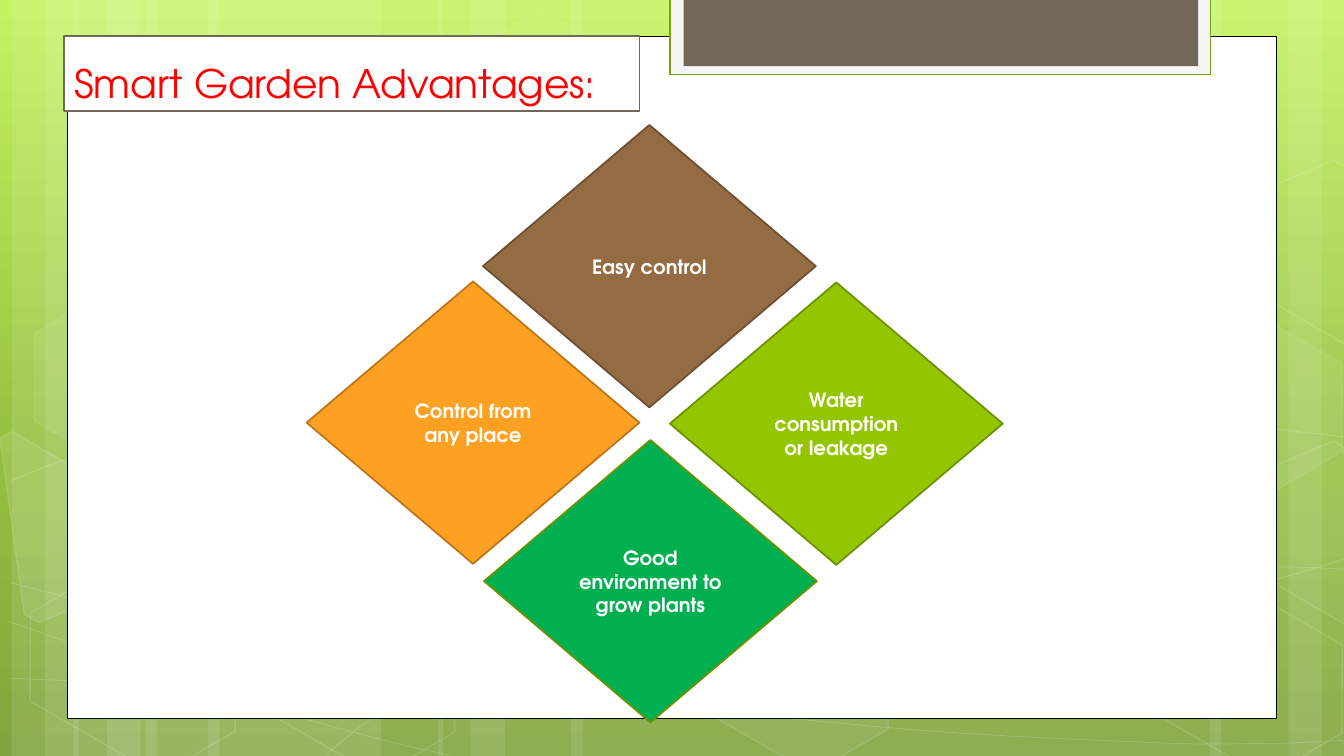
import copy

import pptx
import pptx.util
from pptx.dml.color import RGBColor
from pptx.enum.shapes import MSO_SHAPE
from pptx.enum.text import MSO_ANCHOR, MSO_AUTO_SIZE, PP_ALIGN
from pptx.oxml.ns import qn
from pptx.oxml.xmlchemy import OxmlElement

PX = 9525
PAGE_WIDTH, PAGE_HEIGHT = 1280, 720
FONT = "TeX Gyre Adventor"

WHITE = RGBColor(0xFF, 0xFF, 0xFF)
BLACK = RGBColor(0x00, 0x00, 0x00)
RED = RGBColor(0xFF, 0x00, 0x00)
PALE_GREY = RGBColor(0xF5, 0xF5, 0xF5)
TAUPE = RGBColor(0x71, 0x68, 0x5A)
LEAF = RGBColor(0x74, 0xA5, 0x10)
ORANGE = RGBColor(0xFE, 0xA0, 0x22)
DARK_ORANGE = RGBColor(0xBC, 0x76, 0x19)
BROWN = RGBColor(0x95, 0x6B, 0x43)
DARK_BROWN = RGBColor(0x6E, 0x4F, 0x32)
LIME = RGBColor(0x94, 0xC6, 0x00)
DARK_LIME = RGBColor(0x6D, 0x92, 0x00)
GREEN = RGBColor(0x00, 0xB0, 0x50)

BACKGROUND_STOPS = [
    (0, RGBColor(0xC3, 0xF3, 0x5F)),
    (0.62, RGBColor(0x93, 0xBF, 0x3F)),
    (1, RGBColor(0x81, 0xA5, 0x3E)),
]

# left, width
BARS = [
    (139, 224), (11, 64), (43, 107), (198, 224), (70, 64), (102, 107),
    (939, 224), (1227, 64), (1152, 107), (544, 395), (417, 64), (448, 107),
]

# a start point, then two control points and an end point for each bend
CURVES = [
    [(10, 646), (79, 649), (148, 652), (244, 651), (340, 650), (458, 648), (586, 638),
     (714, 629), (896, 611), (1013, 592), (1131, 574), (1251, 545), (1289, 529)],
    [(10, 458), (46, 443), (83, 428), (156, 414), (228, 399), (331, 378), (444, 372),
     (559, 366), (696, 364), (837, 372), (978, 379), (1212, 409), (1289, 417)],
    [(8, 592), (163, 645), (317, 698), (428, 719)],
    [(10, 555), (49, 565), (89, 576), (164, 591), (238, 606), (349, 630), (456, 646),
     (563, 662), (698, 680), (804, 689), (910, 700), (1023, 704), (1092, 707),
     (1159, 710), (1176, 708), (1210, 708), (1242, 708), (1266, 705), (1289, 705)],
    [(310, 719), (333, 700), (355, 681), (387, 663), (418, 646), (461, 627), (496, 613),
     (532, 600), (554, 594), (601, 585), (648, 575), (734, 562), (779, 555),
     (824, 548), (830, 548), (871, 546), (910, 543), (972, 540), (1017, 540),
     (1061, 539), (1135, 540), (1135, 540), (1163, 540), (1191, 540), (1219, 540),
     (1243, 540), (1264, 541), (1276, 542), (1287, 543), (1284, 542), (1287, 543)],
]

# left, top, fill opacity, line opacity
HEXAGONS = [
    (427, 35, 4, 8), (636, 565, 6, 12), (14, 567, 0, 12), (18, 300, 7, 8),
    (223, 568, 0, 12), (1068, 569, 0, 12), (1068, 301, 7, 8),
]

# fill opacity, corners
CUT_HEXAGONS = [
    (10, [(0, 417), (12, 411), (110, 468), (122, 558), (37, 593), (23, 585)]),
    (4, [(1186, 455), (1270, 420), (1279, 425), (1303, 600), (1295, 603), (1197, 546)]),
    (0, [(1186, 188), (1270, 153), (1281, 158), (1303, 332), (1295, 336), (1197, 279)]),
]

# left, top, text, fill, line
ADVANTAGES = [
    (292, 268, "Control from any place", ORANGE, DARK_ORANGE),
    (460, 119, "Easy control", BROWN, DARK_BROWN),
    (638, 269, "Water consumption or leakage", LIME, DARK_LIME),
    (461, 419, "Good environment to grow plants", GREEN, DARK_LIME),
]


def set_opacity(shape, fill_route, percent):
    for colour in shape.element.spPr.xpath(fill_route + "/a:srgbClr"):
        alpha = OxmlElement("a:alpha")
        alpha.set("val", str(percent * 1000))
        colour.append(alpha)


def paint(shape, fill=None, line=None, weight=1.25, fill_opacity=100, line_opacity=100):
    """Fill and outline a shape; None or zero opacity leaves that part empty."""
    if fill is None or fill_opacity == 0:
        shape.fill.background()
    else:
        shape.fill.solid()
        shape.fill.fore_color.rgb = fill
    if line is None:
        shape.line.fill.background()
    else:
        shape.line.color.rgb = line
        shape.line.width = pptx.util.Pt(weight)
    if fill_opacity < 100:
        set_opacity(shape, "./a:solidFill", fill_opacity)
    if line_opacity < 100:
        set_opacity(shape, "./a:ln/a:solidFill", line_opacity)


def add_preset(parent, kind, left, top, width, height, **look):
    shape = parent.shapes.add_shape(kind, left * PX, top * PX, width * PX, height * PX)
    shape.shadow.inherit = False
    paint(shape, **look)
    return shape


def add_outline(parent, points, closed, **look):
    start, *rest = points
    builder = parent.shapes.build_freeform(*start, scale=PX)
    builder.add_line_segments(rest, close=closed)
    shape = builder.convert_to_shape()
    shape.shadow.inherit = False
    paint(shape, line=WHITE, **look)
    return shape


def bend_segments(shape):
    """Turn each three straight segments into one cubic Bezier bend."""
    segments = shape.element.spPr.xpath(".//a:lnTo")
    for first in range(0, len(segments), 3):
        bend = OxmlElement("a:cubicBezTo")
        segments[first].addprevious(bend)
        for segment in segments[first:first + 3]:
            bend.append(segment[0])
            segment.getparent().remove(segment)


def write_text(shape, text, size, colour, bold=False, align=PP_ALIGN.LEFT,
               anchor=MSO_ANCHOR.MIDDLE):
    frame = shape.text_frame
    frame.word_wrap = True
    frame.auto_size = MSO_AUTO_SIZE.NONE
    frame.vertical_anchor = anchor
    para = frame.paragraphs[0]
    para.alignment = align
    span = para.add_run()
    span.text = text
    span.font.name = FONT
    span.font.size = pptx.util.Pt(size)
    span.font.bold = bold
    span.font.color.rgb = colour


def fill_background(page):
    fill = page.background.fill
    fill.gradient()
    fill.gradient_angle = 270
    stop_list = page.element.find(".//" + qn("a:gsLst"))
    stop_list.append(copy.deepcopy(stop_list[0]))
    for stop, (position, colour) in zip(fill.gradient_stops, BACKGROUND_STOPS):
        stop.position = position
        stop.color.rgb = colour


def add_backdrop(page):
    backdrop = page.shapes.add_group_shape()
    for left, width in BARS:
        add_preset(backdrop, MSO_SHAPE.RECTANGLE, left, 0, width, PAGE_HEIGHT,
                   fill=WHITE, fill_opacity=10)
    for knots in CURVES:
        bend_segments(add_outline(backdrop, knots, False, weight=0.5, line_opacity=20))
    for left, top, fill_opacity, line_opacity in HEXAGONS:
        hexagon = add_preset(backdrop, MSO_SHAPE.HEXAGON, left, top, 225, 146, fill=WHITE,
                             line=WHITE, weight=1, fill_opacity=fill_opacity,
                             line_opacity=line_opacity)
        hexagon.adjustments[0] = 0.285
        hexagon.rotation = 30
    for opacity, corners in CUT_HEXAGONS:
        add_outline(backdrop, corners, True, fill=WHITE, weight=1, fill_opacity=opacity,
                    line_opacity=12)


def add_title(page, text):
    title = page.shapes.title
    title.left, title.top, title.width, title.height = (
        length * PX for length in (61, 34, 548, 72))
    paint(title, fill=WHITE, line=TAUPE)
    write_text(title, text, 28, RED, anchor=MSO_ANCHOR.BOTTOM)
    title.element.getparent().append(title.element)


def main():
    deck = pptx.Presentation()
    deck.slide_width, deck.slide_height = PAGE_WIDTH * PX, PAGE_HEIGHT * PX
    page = deck.slides.add_slide(deck.slide_layouts.get_by_name("Title Only"))
    fill_background(page)
    add_backdrop(page)
    add_preset(page, MSO_SHAPE.RECTANGLE, 64, 35, 1152, 649, fill=WHITE, line=BLACK, weight=0.5)
    add_preset(page, MSO_SHAPE.RECTANGLE, 638, -2, 515, 73, fill=PALE_GREY, line=LEAF)
    add_preset(page, MSO_SHAPE.RECTANGLE, 651, -2, 490, 65, fill=TAUPE)
    add_title(page, "Smart Garden Advantages:")
    for left, top, text, fill, line in ADVANTAGES:
        diamond = add_preset(page, MSO_SHAPE.DIAMOND, left, top, 317, 269, fill=fill, line=line)
        write_text(diamond, text, 14, WHITE, bold=True, align=PP_ALIGN.CENTER)
    deck.save("out.pptx")


if __name__ == "__main__":
    main()
